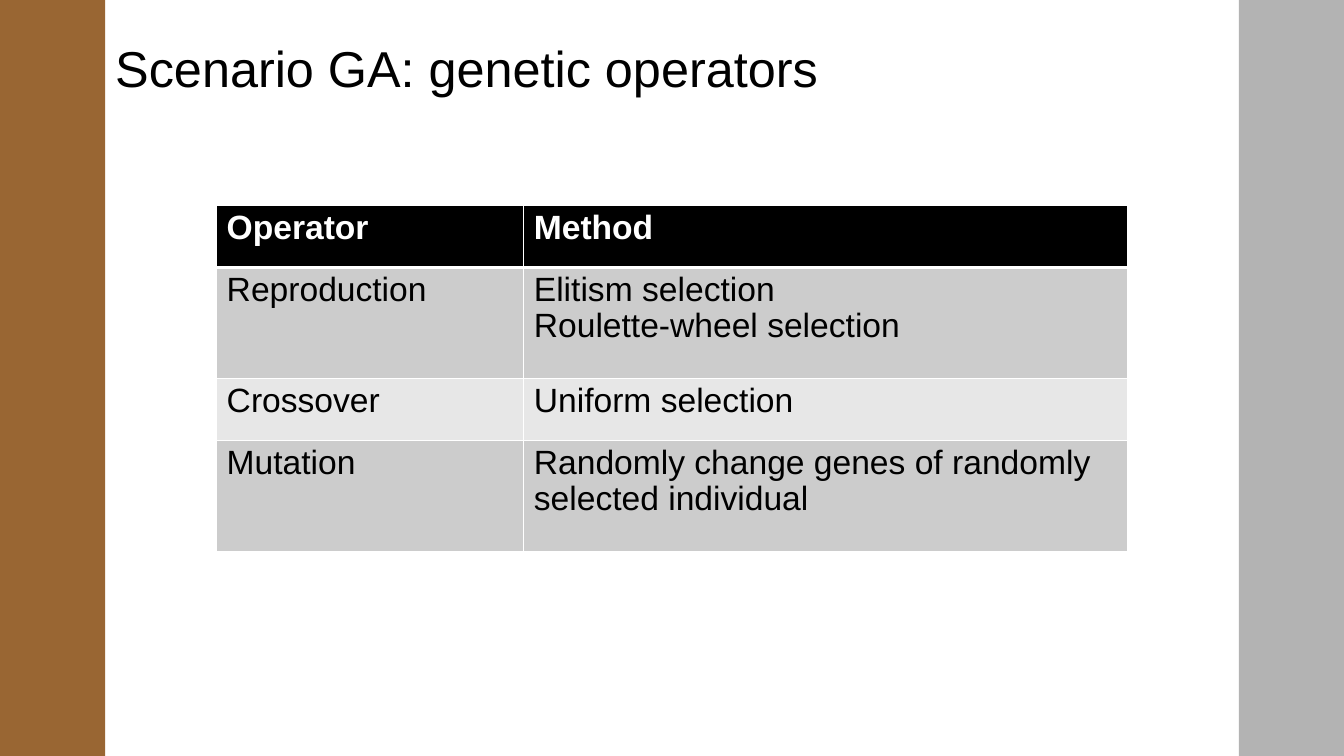
from dataclasses import dataclass

import lxml.etree
import pptx
import pptx.dml.color
import pptx.enum.shapes
import pptx.enum.text
import pptx.oxml.ns
import pptx.util
from pptx.util import Cm, Pt


@dataclass(frozen=True)
class Theme:
    font: str = "Arial"
    title_size: int = 36
    table_size: int = 24
    line_spacing: float = 0.96
    black: str = "000000"
    white: str = "FFFFFF"
    brown: str = "996633"
    grey: str = "B3B3B3"
    bands: tuple = ("CCCCCC", "E7E7E7")


THEME = Theme()
SLIDE_WIDTH, SLIDE_HEIGHT = Cm(33.87), Cm(19.05)
BAR_WIDTH = Cm(2.65)
OPERATORS = [
    ("Operator", "Method"),
    ("Reproduction", "Elitism selection\nRoulette-wheel selection"),
    ("Crossover", "Uniform selection"),
    ("Mutation", "Randomly change genes of randomly selected individual"),
]


def color(value):
    return pptx.dml.color.RGBColor.from_string(value)


def format_text(text_frame, size, text_color, bold=False):
    for paragraph in text_frame.paragraphs:
        paragraph.alignment = pptx.enum.text.PP_ALIGN.LEFT
        for run in paragraph.runs:
            run.font.name = THEME.font
            run.font.size = Pt(size)
            run.font.bold = bold
            run.font.color.rgb = color(text_color)


def add_bar(slide, left, fill):
    bar = slide.shapes.add_shape(
        pptx.enum.shapes.MSO_SHAPE.RECTANGLE, left, 0, BAR_WIDTH, SLIDE_HEIGHT)
    bar.shadow.inherit = False
    bar.fill.solid()
    bar.fill.fore_color.rgb = color(fill)
    bar.line.fill.background()


def set_title(slide, text, left, top, width, height):
    title = slide.shapes.title
    title.left, title.top, title.width, title.height = left, top, width, height
    title.text_frame.text = text
    title.text_frame.vertical_anchor = pptx.enum.text.MSO_ANCHOR.MIDDLE
    format_text(title.text_frame, THEME.title_size, THEME.black)


def set_borders(cell, top, bottom):
    """Draw white borders; top and bottom are widths in points."""
    properties = cell._tc.get_or_add_tcPr()
    qn = pptx.oxml.ns.qn
    for side, width in (("L", 1), ("R", 1), ("T", top), ("B", bottom)):
        line = lxml.etree.SubElement(properties, qn(f"a:ln{side}"), w=str(Pt(width)))
        fill = lxml.etree.SubElement(line, qn("a:solidFill"))
        lxml.etree.SubElement(fill, qn("a:srgbClr"), val=THEME.white)


def add_operator_table(slide, left, top, column_widths, row_heights):
    table = slide.shapes.add_table(
        len(row_heights), len(column_widths), left, top,
        sum(column_widths), sum(row_heights)).table
    for column, width in zip(table.columns, column_widths):
        column.width = width
    for row_index, (row, height) in enumerate(zip(table.rows, row_heights)):
        row.height = height
        header = row_index == 0
        for cell, text in zip(row.cells, OPERATORS[row_index]):
            set_borders(cell, top=3 if row_index == 1 else 1, bottom=3 if header else 1)
            cell.fill.solid()
            cell.fill.fore_color.rgb = color(
                THEME.black if header else THEME.bands[(row_index - 1) % 2])
            cell.text_frame.text = text
            format_text(cell.text_frame, THEME.table_size,
                        THEME.white if header else THEME.black, bold=header)
            for paragraph in cell.text_frame.paragraphs:
                paragraph.line_spacing = THEME.line_spacing


def build_operator_slide(presentation):
    slide = presentation.slides.add_slide(presentation.slide_layouts[5])
    slide.background.fill.solid()
    slide.background.fill.fore_color.rgb = color(THEME.white)
    add_bar(slide, SLIDE_WIDTH - BAR_WIDTH, THEME.grey)
    add_bar(slide, 0, THEME.brown)
    set_title(slide, "Scenario GA: genetic operators",
              BAR_WIDTH, Cm(0.53), SLIDE_WIDTH - 2 * BAR_WIDTH, Cm(2.31))
    single, double = Cm(1.56), Cm(2.8)
    add_operator_table(slide, Cm(5.46), Cm(5.18), [Cm(7.74), Cm(15.22)],
                       [single, double, single, double])


def main():
    presentation = pptx.Presentation()
    presentation.slide_width = SLIDE_WIDTH
    presentation.slide_height = SLIDE_HEIGHT
    build_operator_slide(presentation)
    presentation.save("out.pptx")


if __name__ == "__main__":
    main()
